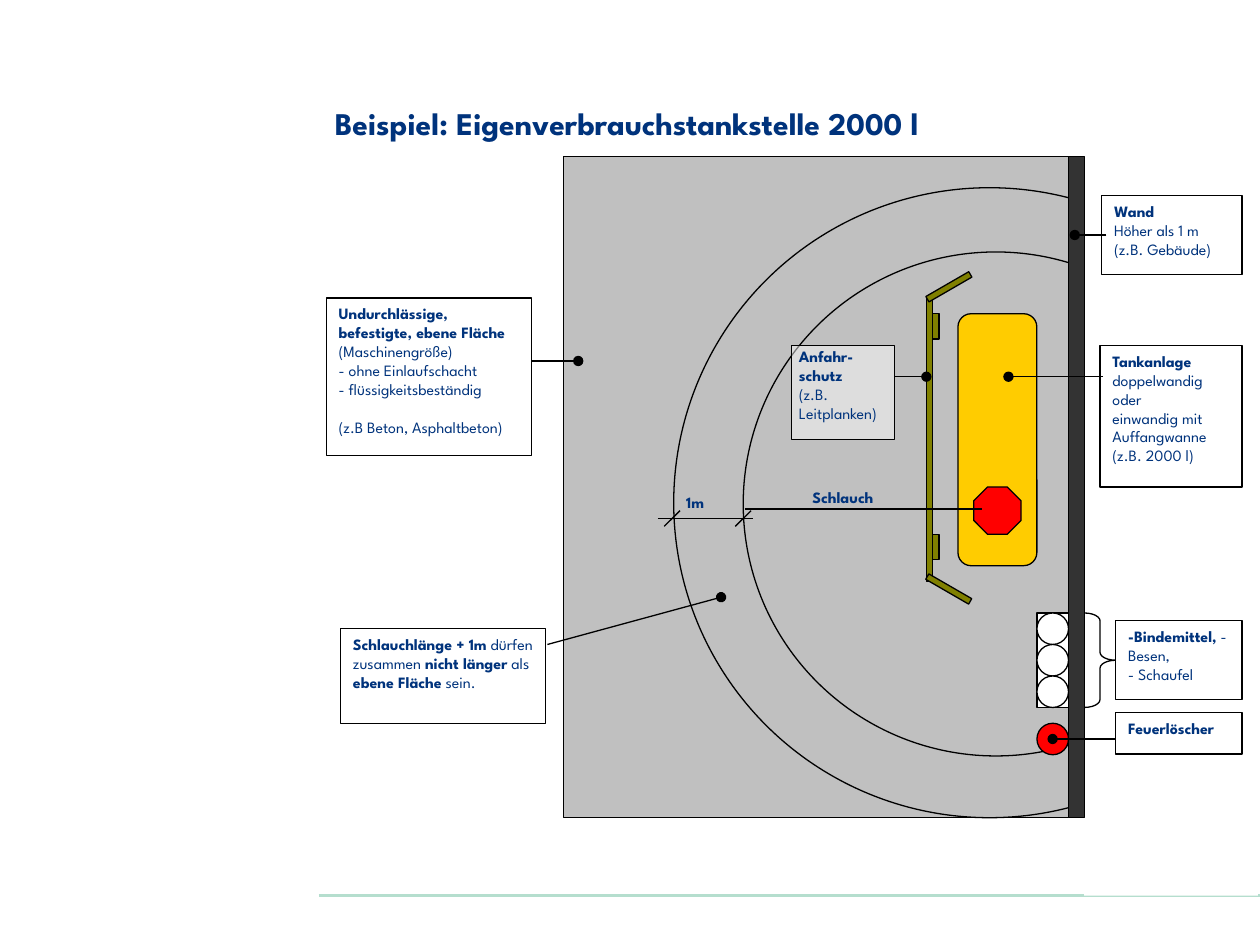
import pptx
import pptx.dml.color
import pptx.enum.shapes
import pptx.enum.text
import pptx.oxml
import pptx.oxml.ns
import pptx.util
from lxml import etree

Inches, Pt = pptx.util.Inches, pptx.util.Pt
RGBColor = pptx.dml.color.RGBColor
KIND = pptx.enum.shapes.MSO_SHAPE
qn = pptx.oxml.ns.qn

BLACK = RGBColor(0x00, 0x00, 0x00)
WHITE = RGBColor(0xFF, 0xFF, 0xFF)
NAVY = RGBColor(0x00, 0x33, 0x7C)
GREY = RGBColor(0xC0, 0xC0, 0xC0)
DARK = RGBColor(0x33, 0x33, 0x33)
YELLOW = RGBColor(0xFF, 0xCC, 0x00)
RED = RGBColor(0xFF, 0x00, 0x00)
OLIVE = RGBColor(0x80, 0x80, 0x00)
MINT = RGBColor(0xB5, 0xDE, 0xCE)
FONT = "League Spartan"

# Grid: starts at the top left corner of the paved area (32 columns, 42 rows)
LEFT, TOP = 4.47, 1.24
COL, ROW = 4.01 / 32, 5.25 / 42
SLIDE_EDGE = (10 - LEFT) / COL

deck = pptx.Presentation()
deck.slide_width, deck.slide_height = Inches(10), Inches(7.5)
slide = deck.slides.add_slide(deck.slide_layouts[6])


def draw(kind, col, row, cols, rows, fill=None, line=BLACK):
    """Shape on the grid; kind None gives a text box."""
    place = (Inches(LEFT + col * COL), Inches(TOP + row * ROW),
             Inches(cols * COL), Inches(rows * ROW))
    if kind is None:
        return slide.shapes.add_textbox(*place)
    shape = slide.shapes.add_shape(kind, *place)
    shape.shadow.inherit = False
    if fill is None:
        shape.fill.background()
    else:
        shape.fill.solid()
        shape.fill.fore_color.rgb = fill
    if line is None:
        shape.line.fill.background()
    else:
        shape.line.color.rgb = line
        shape.line.width = Pt(0.75)
    return shape


def connect(start, end, dot=False, color=BLACK, width=0.75):
    """Straight line on the grid, with an optional dot at its end."""
    (c1, r1), (c2, r2) = start, end
    link = slide.shapes.add_connector(
        pptx.enum.shapes.MSO_CONNECTOR.STRAIGHT,
        Inches(LEFT + c1 * COL), Inches(TOP + r1 * ROW),
        Inches(LEFT + c2 * COL), Inches(TOP + r2 * ROW))
    link.line.color.rgb = color
    link.line.width = Pt(width)
    if dot:
        etree.SubElement(link.line._get_or_add_ln(), qn("a:tailEnd"), type="oval")
    etree.SubElement(link._element.spPr, qn("a:effectLst"))


# Footer rule
connect((-15.48, 46.96), (SLIDE_EDGE, 46.96), color=MINT, width=1.75)

# Paved area, tank with dispenser, reach of the hose
draw(KIND.RECTANGLE, 0, 0, 32, 42, GREY)
draw(KIND.ROUNDED_RECTANGLE, 25, 10, 5, 16, YELLOW)
draw(KIND.OCTAGON, 26, 21, 3, 3, RED)
draw(KIND.OVAL, 11.4, 6.08, 32, 32)
draw(KIND.OVAL, 7, 2, 40, 40)

# Binder drums
draw(KIND.RECTANGLE, 30, 29, 2, 6, WHITE)
for drum in range(3):
    draw(KIND.OVAL, 30, 29 + 2 * drum, 2, 2, WHITE)

# White ground behind the wall, then the wall
draw(KIND.RECTANGLE, 33, -1.04, 11, 48, WHITE, None)
draw(KIND.RECTANGLE, 44, -1.04, SLIDE_EDGE - 44, 43.04, WHITE, None)
draw(KIND.RECTANGLE, 32, 0, 1, 42, DARK)

# Fire extinguisher
draw(KIND.OVAL, 30, 36, 2, 2, RED)

# Crash barrier: rail, two posts, two angled ends
draw(KIND.RECTANGLE, 23, 9, 0.4, 18, OLIVE)
for post_row in (10, 24):
    draw(KIND.RECTANGLE, 23.4, post_row, 0.4, 1.6, OLIVE)
for end_row, angle in ((6.72, 60), (25.9, 300)):
    draw(KIND.RECTANGLE, 24.22, end_row, 0.4, 3.15, OLIVE).rotation = angle

# Brace beside the drums
brace = draw(KIND.RIGHT_BRACE, 33, 29, 2, 6)
brace.adjustments[0] = 0.25

# Labels: place, fill, text size, paragraphs of (text, bold)
labels = [
    ((None, -15.25, -3.7, 59.38, 3.2), None, 18,
     [[("Beispiel: Eigenverbrauchstankstelle 2000 l", True)]]),
    ((KIND.RECTANGLE, 35, 29.5, 8, 5), WHITE, 9,
     [[("-Bindemittel,", True), (" - Besen,", False)],
      [("- Schaufel", False)]]),
    ((KIND.RECTANGLE, 35, 35.3, 8, 2.65), WHITE, 9,
     [[("Feuerlöscher", True)]]),
    ((KIND.RECTANGLE, 34.1, 2.5, 8.9, 5), WHITE, 9,
     [[("Wand", True)], [("Höher als 1 m", False)], [("(z.B. Gebäude)", False)]]),
    ((KIND.RECTANGLE, 34, 12, 9, 9), WHITE, 9,
     [[("Tankanlage ", True), ("doppelwandig oder", False)],
      [("einwandig mit Auffangwanne (z.B. 2000 l)", False)]]),
    ((None, 15, 20.65, 6, 3), None, 9, [[("Schlauch", True)]]),
    ((None, 7, 21, 4, 3), None, 9, [[("1m", True)]]),
    ((KIND.RECTANGLE, 14.45, 12, 6.55, 6), WHITE, 9,
     [[("Anfahr-schutz", True)], [("(z.B. Leitplanken)", False)]]),
    ((KIND.RECTANGLE, -15, 9, 13, 10), WHITE, 9,
     [[("Undurchlässige, befestigte, ebene Fläche", True)],
      [("(Maschinengröße)", False)],
      [("- ohne Einlaufschacht", False)],
      [("- flüssigkeitsbeständig", False)],
      [("(z.B Beton, Asphaltbeton)", False)]]),
    ((KIND.RECTANGLE, -14.1, 30, 13, 6), WHITE, 9,
     [[("Schlauchlänge + 1m", True), (" dürfen zusammen ", False),
       ("nicht länger", True), (" als ", False),
       ("ebene Fläche", True), (" sein.", False)]]),
]
for place, fill, size, paragraphs in labels:
    label = draw(*place, fill)
    frame = label.text_frame
    frame.word_wrap = True
    frame.vertical_anchor = pptx.enum.text.MSO_ANCHOR.TOP
    for number, pieces in enumerate(paragraphs):
        paragraph = frame.add_paragraph() if number else frame.paragraphs[0]
        paragraph.alignment = pptx.enum.text.PP_ALIGN.LEFT
        for words, bold in pieces:
            run = paragraph.add_run()
            run.text = words
            run.font.name, run.font.size, run.font.bold = FONT, Pt(size), bold
            run.font.color.rgb = NAVY
    if paragraphs[0][0][0] == "Anfahr-schutz":
        # Half-transparent label with narrow margins
        frame.margin_left = frame.margin_right = Inches(0.06)
        frame.margin_top = frame.margin_bottom = Inches(0.01)
        tint = label.fill._xPr.find(qn("a:solidFill"))[0]
        etree.SubElement(tint, qn("a:alpha"), val="47000")
    if len(paragraphs) == 5:
        # One line of space before the closing remark
        paragraph.space_before = Pt(11)

# Leader lines, each ending in a dot on the part it explains
for start, end in [
    ((21, 14), (23, 14)),
    ((-2, 13), (0.95, 13)),
    ((-1, 31), (10, 28)),
    ((34.4, 5), (32.4, 5)),
    ((34.2, 14), (28.2, 14)),
    ((35, 37), (31, 37)),
]:
    connect(start, end, dot=True)

# Hose, and the 1 m dimension line with its two ticks
connect((11.5, 22.4), (26.5, 22.4))
connect((6, 23), (12, 23))
for tick in (6.9, 11.4):
    connect((tick - 0.5, 23.5), (tick + 0.5, 22.5))

deck.save("out.pptx")
